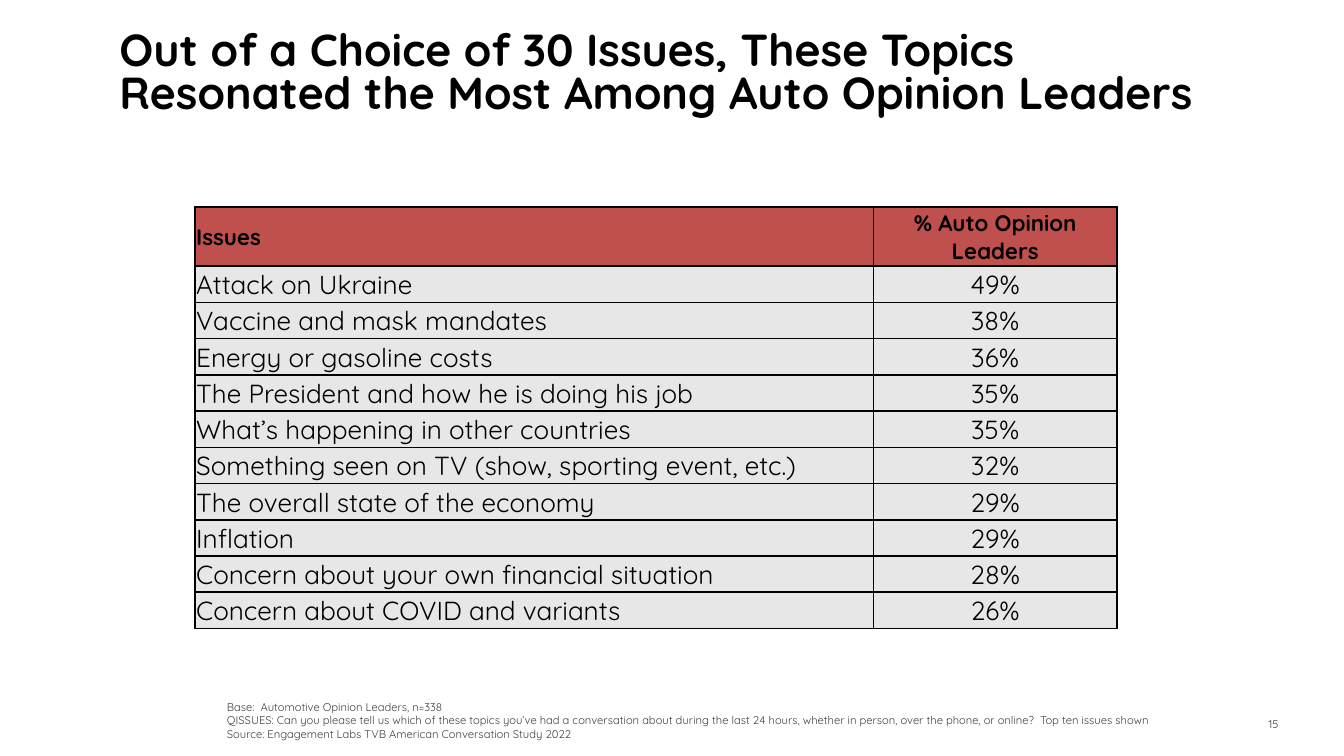
from dataclasses import dataclass

from lxml import etree
from pptx import Presentation
from pptx.dml.color import RGBColor as Color
from pptx.enum.text import MSO_ANCHOR as Anchor, PP_ALIGN as Align
from pptx.oxml.ns import qn
from pptx.util import Inches, Pt

TITLE = "Out of a Choice of 30 Issues, These Topics Resonated the Most Among Auto Opinion Leaders"
HEADER = ("Issues", "% Auto Opinion Leaders")
ISSUES = [
    ("Attack on Ukraine", 49),
    ("Vaccine and mask mandates", 38),
    ("Energy or gasoline costs", 36),
    ("The President and how he is doing his job", 35),
    ("What’s happening in other countries", 35),
    ("Something seen on TV (show, sporting event, etc.)", 32),
    ("The overall state of the economy", 29),
    ("Inflation", 29),
    ("Concern about your own financial situation", 28),
    ("Concern about COVID and variants", 26),
]
FOOTNOTES = [
    "Base:  Automotive Opinion Leaders, n=338",
    "QISSUES: Can you please tell us which of these topics you’ve had a conversation about "
    "during the last 24 hours, whether in person, over the phone, or online?  Top ten issues shown",
    "Source: Engagement Labs TVB American Conversation Study 2022",
]
PAGE_NUMBER = "15"


@dataclass(frozen=True)
class Theme:
    font: str = "Quicksand"
    ink: str = "000000"
    note: str = "404040"
    page: str = "3C3C3A"
    header_fill: str = "C0504D"
    body_fill: str = "E7E7E7"
    title_size: int = 24
    header_size: int = 12
    body_size: int = 14
    note_size: int = 6
    border: int = 1


THEME = Theme()
COLUMN_WIDTHS = (5.05, 1.81)
COLUMN_ALIGNS = (Align.LEFT, Align.CENTER)
HEADER_HEIGHT, ROW_HEIGHT = 0.44, 0.27


def style(paragraph, size, color, bold=False, align=Align.LEFT):
    paragraph.alignment = align
    font = paragraph.font
    font.name, font.size, font.bold = THEME.font, Pt(size), bold
    font.color.rgb = Color.from_string(color)


def add_text(slide, box, lines, size, color, anchor, bold=False, align=Align.LEFT):
    frame = slide.shapes.add_textbox(*map(Inches, box)).text_frame
    frame.word_wrap = True
    frame.vertical_anchor = anchor
    frame.text = "\n".join(lines)
    for paragraph in frame.paragraphs:
        style(paragraph, size, color, bold, align)
    return frame


def add_borders(cell):
    properties = cell._tc.get_or_add_tcPr()
    for position, side in enumerate(("lnL", "lnR", "lnT", "lnB")):
        line = etree.Element(qn(f"a:{side}"), w=str(Pt(THEME.border)))
        fill = etree.SubElement(line, qn("a:solidFill"))
        etree.SubElement(fill, qn("a:srgbClr"), val=THEME.ink)
        properties.insert(position, line)


def fill_cell(cell, text, align, is_header):
    cell.margin_left = cell.margin_right = cell.margin_top = Inches(0.01)
    cell.margin_bottom = 0
    cell.vertical_anchor = Anchor.MIDDLE
    cell.text = text
    size = THEME.header_size if is_header else THEME.body_size
    style(cell.text_frame.paragraphs[0], size, THEME.ink, is_header, align)
    cell.fill.solid()
    cell.fill.fore_color.rgb = Color.from_string(
        THEME.header_fill if is_header else THEME.body_fill)
    add_borders(cell)


def add_issue_table(slide):
    rows = [HEADER] + [(issue, f"{share}%") for issue, share in ISSUES]
    height = HEADER_HEIGHT + ROW_HEIGHT * len(ISSUES)
    box = (1.45, 1.54, sum(COLUMN_WIDTHS), height)
    table = slide.shapes.add_table(len(rows), len(HEADER), *map(Inches, box)).table
    table.horz_banding = False
    for column, width in zip(table.columns, COLUMN_WIDTHS):
        column.width = Inches(width)
    for index, texts in enumerate(rows):
        table.rows[index].height = Inches(ROW_HEIGHT if index else HEADER_HEIGHT)
        for column, (text, align) in enumerate(zip(texts, COLUMN_ALIGNS)):
            fill_cell(table.cell(index, column), text, align, index == 0)


def main():
    presentation = Presentation()
    presentation.slide_width = Inches(10)
    presentation.slide_height = Inches(10) * 9 // 16
    slide = presentation.slides.add_slide(presentation.slide_layouts[6])

    add_text(slide, (9.02, 5.24, 0.59, 0.3), [PAGE_NUMBER], THEME.note_size, THEME.page,
             Anchor.MIDDLE, align=Align.RIGHT)
    title = add_text(slide, (0.79, 0.24, 8.51, 0.94), [TITLE], THEME.title_size, THEME.ink,
                     Anchor.TOP, bold=True)
    title.margin_top = 0
    title.paragraphs[0].line_spacing = 0.8
    add_issue_table(slide)
    add_text(slide, (1.59, 5.16, 7.78, 0.4), FOOTNOTES, THEME.note_size, THEME.note,
             Anchor.BOTTOM)
    presentation.save("out.pptx")


if __name__ == "__main__":
    main()
